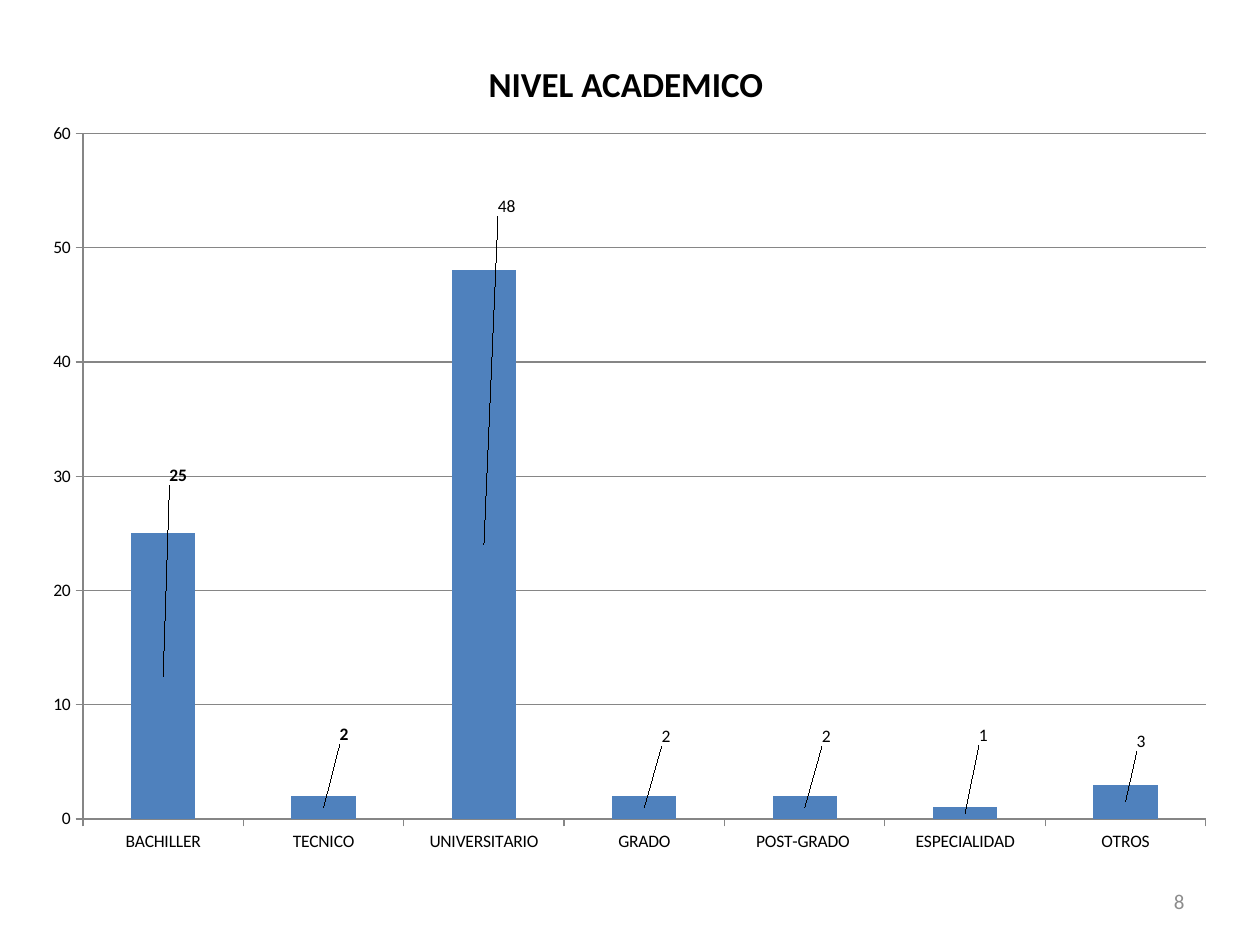
from lxml.etree import SubElement
from pptx import Presentation
from pptx.chart.data import CategoryChartData
from pptx.dml.color import RGBColor
from pptx.enum.chart import XL_CHART_TYPE, XL_TICK_MARK
from pptx.enum.text import MSO_ANCHOR, PP_ALIGN
from pptx.oxml.ns import qn
from pptx.util import Inches, Pt

FONT = "Calibri"
BLACK = RGBColor(0x00, 0x00, 0x00)
GRAY = RGBColor(0x8C, 0x8C, 0x8C)
AXIS = RGBColor(0x86, 0x86, 0x86)
BLUE = RGBColor(0x4F, 0x81, 0xBD)

# category, value, label shift (shares of chart width and height), bold label
LEVELS = [
    ("BACHILLER", 25, 0.0125, -0.264, True),
    ("TECNICO", 2, 0.017, -0.096, True),
    ("UNIVERSITARIO", 48, 0.019, -0.446, False),
    ("GRADO", 2, 0.018, -0.094, False),
    ("POST-GRADO ", 2, 0.018, -0.094, False),
    ("ESPECIALIDAD", 1, 0.015, -0.102, False),
    ("OTROS", 3, 0.013, -0.079, False),
]
PLOT = {"x": 0.045, "y": 0.033, "w": 0.935, "h": 0.904}
TEXTS = [
    ("NIVEL ACADEMICO ", (0.5, 0.3, 9, 0.72), 20, True, BLACK, PP_ALIGN.CENTER),
    ("8", (7.17, 6.95, 2.33, 0.4), 12, False, GRAY, PP_ALIGN.RIGHT),
]


def style(font, size, color, bold=False):
    font.name, font.size, font.bold = FONT, Pt(size), bold
    font.color.rgb = color


def add_text(slide, text, box, size, bold, color, align):
    tf = slide.shapes.add_textbox(*map(Inches, box)).text_frame
    tf.word_wrap = True
    tf.vertical_anchor = MSO_ANCHOR.MIDDLE
    p = tf.paragraphs[0]
    p.alignment = align
    r = p.add_run()
    r.text = text
    style(r.font, size, color, bold)


def set_layout(parent, index, modes, values):
    for old in parent.findall(qn("c:layout")):
        parent.remove(old)
    layout = SubElement(parent, qn("c:layout"))
    parent.insert(index, layout)
    manual = SubElement(layout, qn("c:manualLayout"))
    for tag, value in {**modes, **values}.items():
        SubElement(manual, qn(f"c:{tag}")).set("val", str(value))


def add_level_chart(slide):
    data = CategoryChartData()
    data.categories = [level[0] for level in LEVELS]
    data.add_series("Series 1", [level[1] for level in LEVELS])
    box = map(Inches, (0.23, 0.86, 9.53, 6.02))
    chart = slide.shapes.add_chart(XL_CHART_TYPE.COLUMN_STACKED, *box, data).chart
    chart.has_title = chart.has_legend = False
    style(chart.font, 10, BLACK)

    for axis in (chart.category_axis, chart.value_axis):
        axis.major_tick_mark = XL_TICK_MARK.OUTSIDE
        axis.minor_tick_mark = XL_TICK_MARK.NONE
        axis.format.line.color.rgb = AXIS
        axis.format.line.width = Pt(0.75)
    scale = chart.value_axis
    scale.minimum_scale, scale.maximum_scale, scale.major_unit = 0, 60, 10
    scale.has_major_gridlines = True
    scale.major_gridlines.format.line.color.rgb = AXIS
    scale.major_gridlines.format.line.width = Pt(0.75)

    plot = chart.plots[0]
    plot.gap_width, plot.overlap, plot.vary_by_categories = 150, 100, False
    series = plot.series[0]
    series.format.fill.solid()
    series.format.fill.fore_color.rgb = BLUE
    series.data_labels.show_value = True
    for i, (_, _, dx, dy, bold) in enumerate(LEVELS):
        style(series.points[i].data_label.font, 10, BLACK, bold)
    for label, (_, _, dx, dy, _) in zip(series.data_labels._element.findall(qn("c:dLbl")), LEVELS):
        set_layout(label, 1, {}, {"x": dx, "y": dy})

    area = chart._chartSpace.find(f".//{qn('c:plotArea')}")
    modes = {"layoutTarget": "inner", "xMode": "edge", "yMode": "edge"}
    set_layout(area, 0, modes, PLOT)


def main():
    prs = Presentation()
    prs.slide_width, prs.slide_height = Inches(10), Inches(7.5)
    slide = prs.slides.add_slide(prs.slide_layouts[6])
    for item in TEXTS:
        add_text(slide, *item)
    add_level_chart(slide)
    prs.save("out.pptx")


if __name__ == "__main__":
    main()
